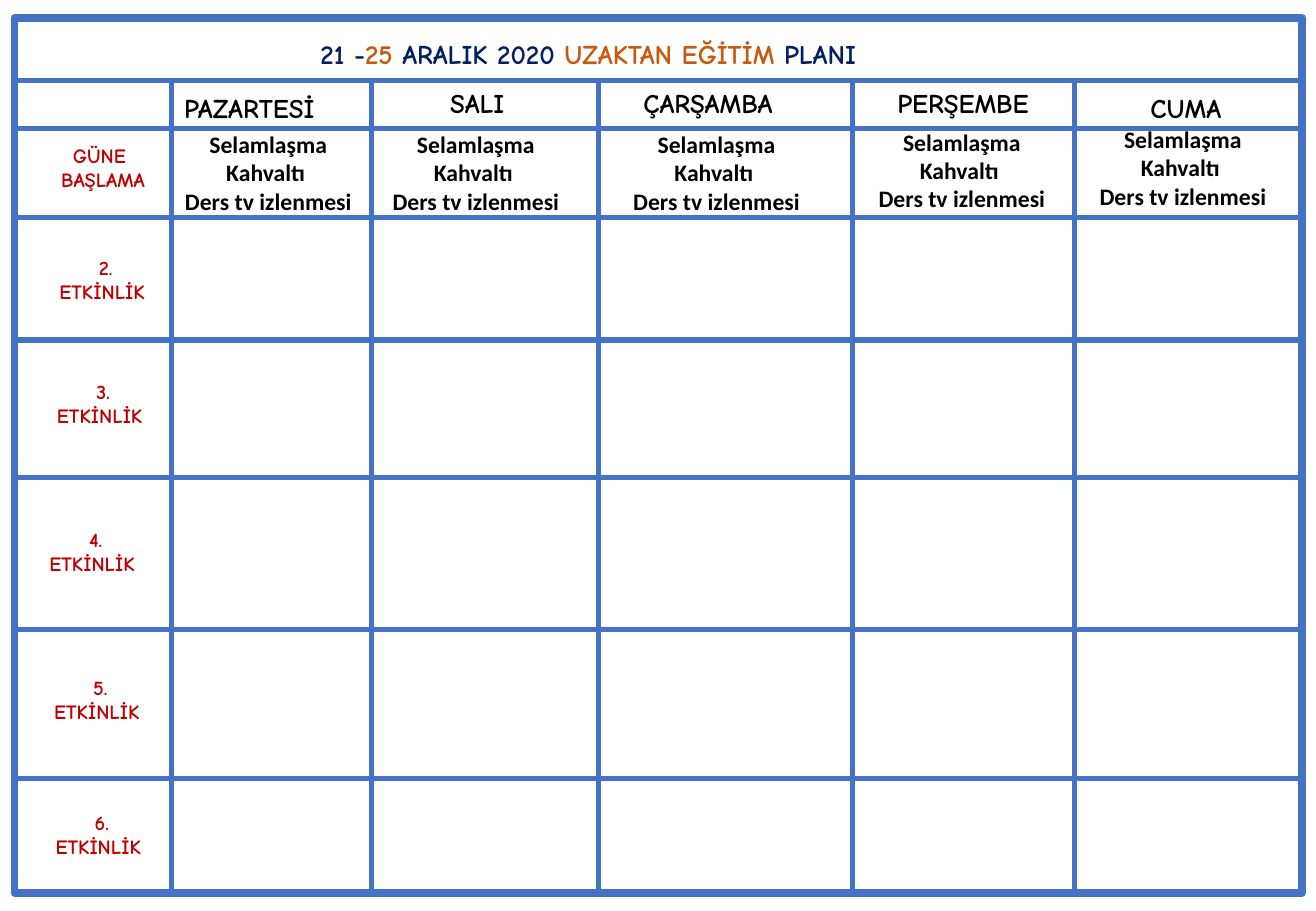
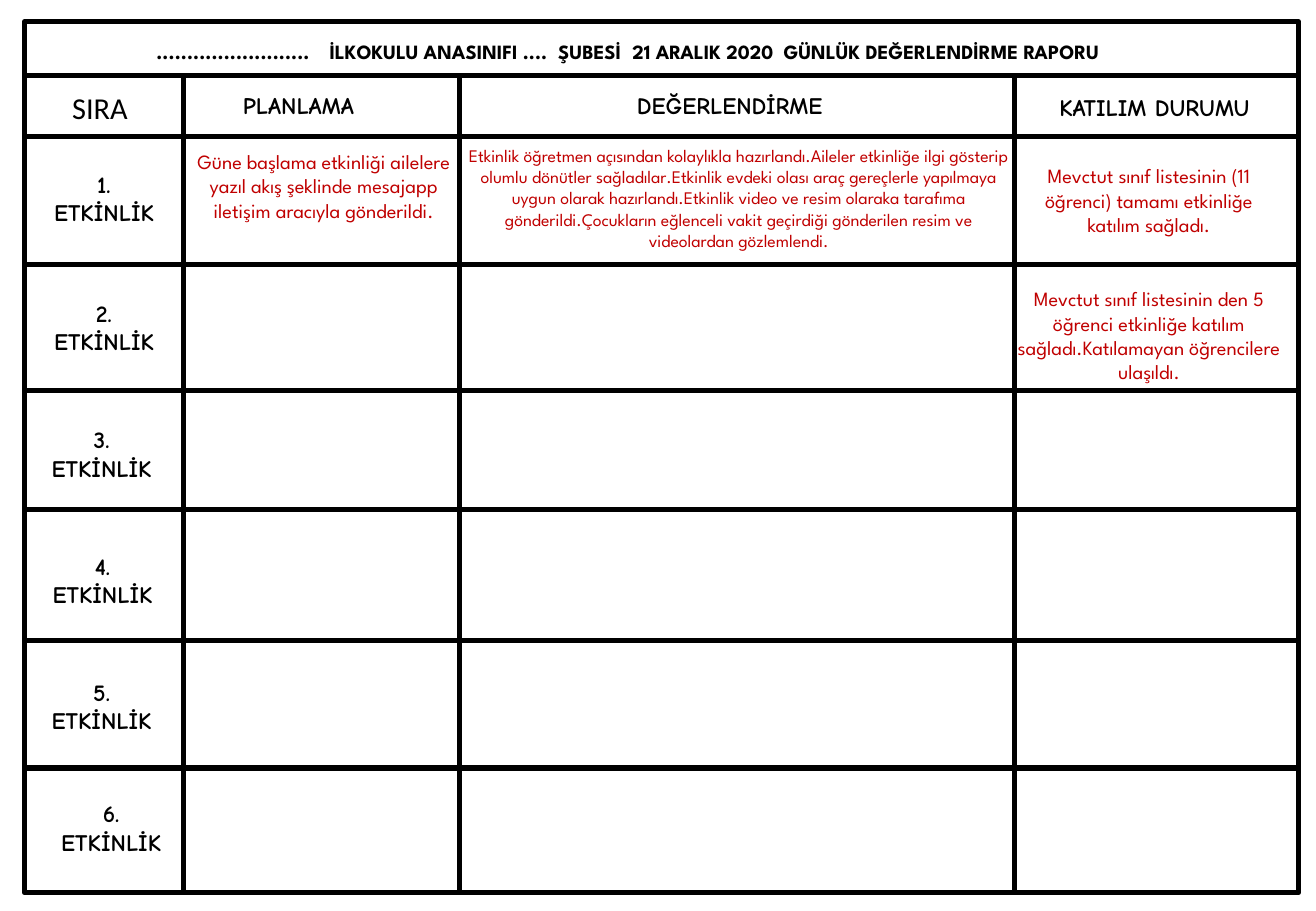
from dataclasses import dataclass

from lxml.etree import SubElement
from pptx import Presentation
from pptx.dml.color import RGBColor
from pptx.enum.shapes import MSO_CONNECTOR as Connector, MSO_SHAPE as Shape
from pptx.enum.text import MSO_AUTO_SIZE as AutoSize, PP_ALIGN as Align
from pptx.oxml.ns import qn
from pptx.util import Cm, Pt


@dataclass(frozen=True)
class Theme:
    blue: str = "4472C4"
    navy: str = "002060"
    orange: str = "C55A11"
    red: str = "C00000"
    black: str = "000000"
    white: str = "FFFFFF"
    hand: str = "Comic Neue"
    plain: str = "Calibri"
    report: str = "League Spartan"
    rule: float = 3
    thick_rule: float = 4.5

    def style(self, name, size, color, bold=True):
        return dict(name=name, size=Pt(size), color=color, bold=bold)


THEME = Theme()
PLAN_TITLE = THEME.style(THEME.hand, 16, THEME.navy)
DAY = THEME.style(THEME.hand, 16, THEME.black)
PLAN_LABEL = THEME.style(THEME.hand, 12, THEME.red)
GREETING = THEME.style(THEME.plain, 14, THEME.black)
REPORT_TITLE = THEME.style(THEME.report, 12, THEME.black)
ORDER_HEAD = THEME.style(THEME.plain, 18, THEME.black, bold=False)
REPORT_LABEL = THEME.style(THEME.hand, 14, THEME.black)
NOTE = THEME.style(THEME.report, 12, THEME.red, bold=False)
LONG_NOTE = THEME.style(THEME.report, 10.5, THEME.red, bold=False)


@dataclass(frozen=True)
class Grid:
    """Ruled frame in cm; rows and cols are edges measured from its corner."""
    left: float
    top: float
    width: float
    height: float
    rows: tuple
    cols: tuple
    color: str
    border: float

    def cell(self, row, col):
        return self.left + self.cols[col], self.top + self.rows[row]


def rgb(color):
    return RGBColor.from_string(color)


def add_rule(slide, grid, start, end):
    rule = slide.shapes.add_connector(Connector.STRAIGHT, *map(Cm, start + end))
    rule.line.color.rgb = rgb(grid.color)
    rule.line.width = Pt(THEME.rule)
    SubElement(rule._element.spPr, qn("a:effectLst"))


def add_grid(slide, grid):
    frame = slide.shapes.add_shape(
        Shape.RECTANGLE, *map(Cm, (grid.left, grid.top, grid.width, grid.height)))
    frame.shadow.inherit = False
    frame.fill.solid()
    frame.fill.fore_color.rgb = rgb(THEME.white)
    frame.line.color.rgb = rgb(grid.color)
    frame.line.width = Pt(grid.border)
    right, bottom = grid.left + grid.width, grid.top + grid.height
    for row in range(1, len(grid.rows)):
        y = grid.cell(row, 0)[1]
        add_rule(slide, grid, (grid.left, y), (right, y))
    for col in range(1, len(grid.cols)):
        x, y = grid.cell(1, col)
        add_rule(slide, grid, (x, y), (x, bottom))


def add_text(slide, cell, nudge, size, paragraphs, style,
             align=Align.CENTER, wrap=False):
    """Place paragraphs, each a list of (text, colour or None), by a cell corner."""
    (x, y), (dx, dy) = cell, nudge
    box = slide.shapes.add_textbox(*map(Cm, (x + dx, y + dy, *size)))
    frame = box.text_frame
    frame.word_wrap = wrap
    frame.auto_size = AutoSize.SHAPE_TO_FIT_TEXT
    for index, pieces in enumerate(paragraphs):
        paragraph = frame.add_paragraph() if index else frame.paragraphs[0]
        paragraph.alignment = align
        for text, color in pieces:
            run = paragraph.add_run()
            run.text = text
            for key in ("name", "size", "bold"):
                setattr(run.font, key, style[key])
            run.font.color.rgb = rgb(color or style["color"])
    return frame


def lines(*texts):
    return [[(text, None)] for text in texts]


def set_tabs(paragraph, stops):
    tabs = SubElement(paragraph._p.get_or_add_pPr(), qn("a:tabLst"))
    for stop in stops:
        SubElement(tabs, qn("a:tab"), pos=str(int(Cm(stop))), algn="l")


def add_activity_labels(slide, grid, first, nudges, size, word, style):
    """Number the activity rows down to the last row of the grid."""
    start = len(grid.rows) - len(nudges)
    for index, nudge in enumerate(nudges):
        add_text(slide, grid.cell(start + index, 0), nudge, size,
                 lines(f"{first + index}.", word), style)


def build_weekly_plan(slide, grid):
    add_grid(slide, grid)
    title = [("21 -", None), ("25", THEME.orange), (" ARALIK 2020 ", None),
             ("UZAKTAN EĞİTİM ", THEME.orange), ("PLANI", None)]
    add_text(slide, grid.cell(0, 0), (6.15, 0.28), (14.88, 0.94),
             [title], PLAN_TITLE, Align.LEFT)

    days = [  # name, nudge, width, nudge of the greeting
        ("PAZARTESİ", (0.02, 0.1), 4.11, (-0.61, -0.1)),
        ("SALI", (1.39, 0), 1.93, (-0.46, -0.1)),
        ("ÇARŞAMBA", (0.68, 0), 3.73, (-0.18, -0.1)),
        ("PERŞEMBE", (0.68, 0), 3.78, (-0.36, -0.15)),
        ("CUMA", (1.33, 0.1), 2.29, (-0.38, -0.2)),
    ]
    greeting = lines("Selamlaşma", "Kahvaltı ", "Ders tv izlenmesi")
    for col, (day, nudge, width, greeting_nudge) in enumerate(days, 1):
        add_text(slide, grid.cell(1, col), nudge, (width, 0.94),
                 lines(day), DAY, Align.LEFT)
        add_text(slide, grid.cell(2, col), greeting_nudge, (5.28, 2.06),
                 greeting, GREETING, wrap=True)

    add_text(slide, grid.cell(2, 0), (0.56, 0.18), (2.59, 1.27),
             lines("GÜNE ", "BAŞLAMA"), PLAN_LABEL)
    nudges = [(0.41, 0.66), (0.36, 0.69), (0.2, 0.92), (0.3, 0.83), (0.33, 0.53)]
    add_activity_labels(slide, grid, 2, nudges, (3, 1.8), "ETKİNLİK ", PLAN_LABEL)


def build_daily_report(slide, grid):
    add_grid(slide, grid)
    title = ".........................\tİLKOKULU ANASINIFI ....\tŞUBESİ" \
            "\t21 ARALIK 2020\tGÜNLÜK DEĞERLENDİRME RAPORU"
    frame = add_text(slide, grid.cell(0, 0), (2.51, 0.23), (22.63, 0.76),
                     lines(title), REPORT_TITLE, Align.LEFT, wrap=True)
    set_tabs(frame.paragraphs[0], (3.62, 8.4, 9.95, 13.11))

    heads = [
        ("SIRA", (0.74, 0.15), (1.68, 1.02), ORDER_HEAD),
        ("PLANLAMA", (0.84, 0.2), (3.12, 0.86), REPORT_LABEL),
        ("DEĞERLENDİRME", (3.38, 0.2), (4.55, 0.86), REPORT_LABEL),
        ("KATILIM DURUMU", (0.51, 0.23), (4.83, 0.86), REPORT_LABEL),
    ]
    for col, (head, nudge, size, style) in enumerate(heads):
        add_text(slide, grid.cell(1, col), nudge, size, lines(head), style)

    nudges = [(0.28, 0.58), (0.28, 0.58), (0.23, 0.61),
              (0.25, 0.76), (0.23, 0.66), (0.43, 0.53)]
    add_activity_labels(slide, grid, 1, nudges, (2.77, 1.45), "ETKİNLİK",
                        REPORT_LABEL)

    notes = [  # row, column, nudge, size, style, text
        (2, 1, (-0.08, 0.15), (6.02, 2.31), NOTE,
         "Güne başlama etkinliği ailelere yazıl akış şeklinde mesajapp "
         "iletişim aracıyla gönderildi."),
        (2, 2, (-0.15, 0.05), (11.99, 2.49), LONG_NOTE,
         "Etkinlik öğretmen açısından kolaylıkla hazırlandı.Aileler etkinliğe "
         "ilgi gösterip olumlu dönütler sağladılar.Etkinlik evdeki olası araç "
         "gereçlerle yapılmaya uygun olarak hazırlandı.Etkinlik video ve resim "
         "olaraka tarafıma gönderildi.Çocukların eğlenceli vakit geçirdiği "
         "gönderilen resim ve videolardan gözlemlendi."),
        (2, 3, (-0.2, 0.45), (6.02, 1.8), NOTE,
         "Mevctut sınıf listesinin (11 öğrenci) tamamı etkinliğe katılım "
         "sağladı."),
        (3, 3, (-0.2, 0.33), (6.02, 2.31), NOTE,
         "Mevctut sınıf listesinin den 5 öğrenci etkinliğe katılım "
         "sağladı.Katılamayan öğrencilere ulaşıldı."),
    ]
    for row, col, nudge, size, style, text in notes:
        add_text(slide, grid.cell(row, col), nudge, size, lines(text), style,
                 wrap=True)


def main():
    deck = Presentation()
    deck.slide_width, deck.slide_height = Cm(27.51), Cm(19.05)
    plan_grid = Grid(0.3, 0.38, 26.92, 18.29,
                     (0, 1.3, 2.31, 4.17, 6.73, 9.6, 12.78, 15.9),
                     (0, 3.28, 7.47, 12.22, 17.53, 22.17),
                     THEME.blue, THEME.thick_rule)
    report_grid = Grid(0.51, 0.46, 26.64, 18.21,
                       (0, 1.12, 2.39, 5.08, 7.7, 10.19, 12.93, 15.6),
                       (0, 3.33, 9.09, 20.7),
                       THEME.black, THEME.rule)
    for build, grid in ((build_weekly_plan, plan_grid),
                        (build_daily_report, report_grid)):
        build(deck.slides.add_slide(deck.slide_layouts[6]), grid)
    deck.save("out.pptx")


if __name__ == "__main__":
    main()
